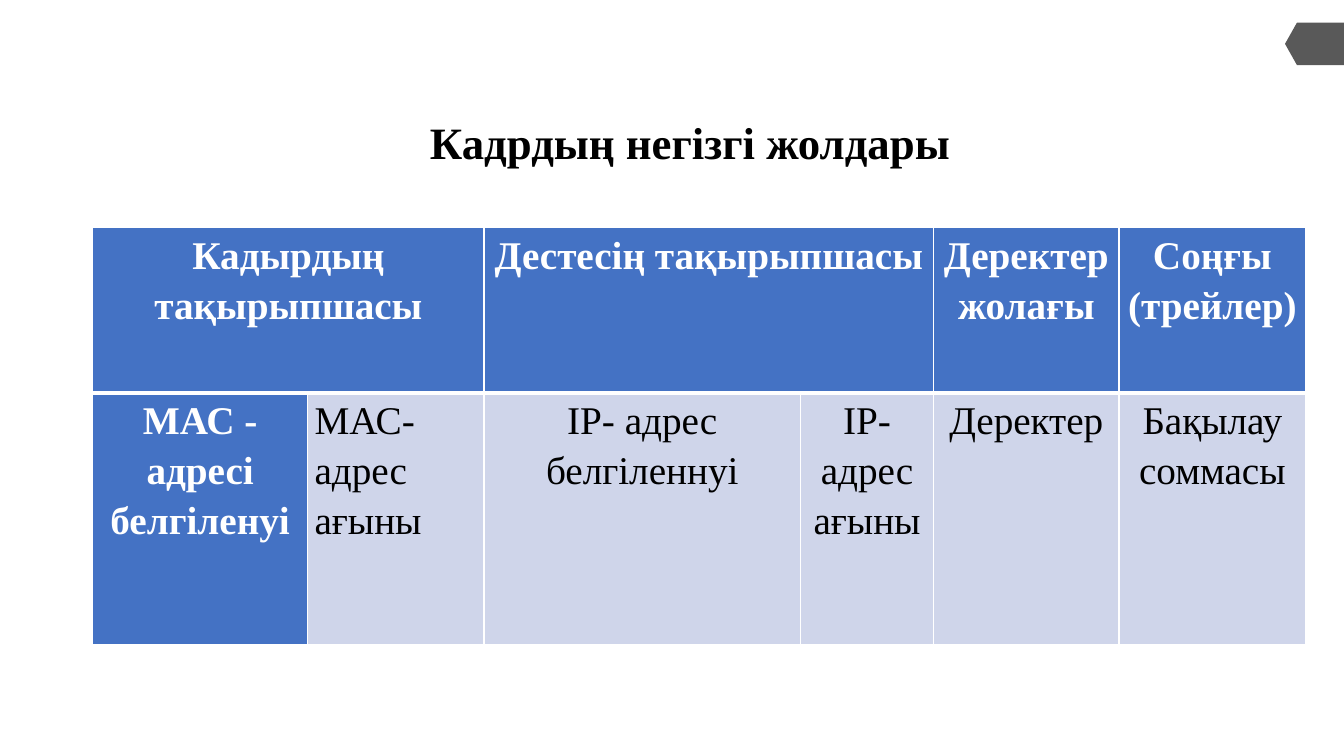
"""Build the slide on the main fields of a network frame."""
from lxml import etree
from pptx import Presentation
from pptx.dml.color import RGBColor
from pptx.enum.shapes import MSO_SHAPE
from pptx.enum.text import PP_ALIGN
from pptx.oxml.ns import qn
from pptx.util import Emu, Pt

CENTER, JUSTIFY = PP_ALIGN.CENTER, PP_ALIGN.JUSTIFY
PAGE_TAB = MSO_SHAPE.FLOWCHART_OFFPAGE_CONNECTOR
WHITE = RGBColor(0xFF, 0xFF, 0xFF)
BLACK = RGBColor(0x00, 0x00, 0x00)
GREY = RGBColor(0x59, 0x59, 0x59)
BLUE = RGBColor(0x44, 0x72, 0xC4)
PALE_BLUE = RGBColor(0xCF, 0xD5, 0xEA)

TITLE = "Кадрдың негізгі жолдары"
HEADERS = [
    ("Кадырдың тақырыпшасы", 2),
    ("Дестесің тақырыпшасы", 2),
    ("Деректер жолағы", 1),
    ("Соңғы (трейлер)", 1),
]
FIELDS = [
    "МАС - адресі белгіленуі",
    "МАС- адрес ағыны",
    "IP- адрес белгіленнуі",
    "IP- адрес ағыны",
    "Деректер",
    "Бақылау соммасы",
]
JUSTIFIED_COLUMN = 1
COLUMN_WIDTHS = [213, 175, 314, 132, 184, 185]
ROW_HEIGHTS = [164, 250]
CELL_MARGINS = {"margin_left": 7, "margin_right": 7, "margin_top": 0, "margin_bottom": 0}
PARAGRAPH_FORMAT = {"line_spacing": 1.15, "space_after": Pt(10)}


def px(length):
    return Emu(length * 9144)


def box(*lengths):
    return [px(length) for length in lengths]


def set_attributes(target, values):
    for name, value in values.items():
        setattr(target, name, value)


def write(text_frame, text, size, color, bold, alignment=CENTER):
    paragraph = text_frame.paragraphs[0]
    set_attributes(paragraph, {**PARAGRAPH_FORMAT, "alignment": alignment})
    run = paragraph.add_run()
    run.text = text
    set_attributes(run.font, {"name": "Times New Roman", "size": Pt(size), "bold": bold})
    run.font.color.rgb = color
    return paragraph


def style_cell(cell, fill, top, bottom):
    set_attributes(cell, {name: px(value) for name, value in CELL_MARGINS.items()})
    properties = cell._tc.get_or_add_tcPr()
    for side, points in {"L": 1, "R": 1, "T": top, "B": bottom}.items():
        line = etree.SubElement(properties, qn(f"a:ln{side}"), w=str(Pt(points)))
        solid = etree.SubElement(line, qn("a:solidFill"))
        etree.SubElement(solid, qn("a:srgbClr"), val=str(WHITE))
    cell.fill.solid()
    cell.fill.fore_color.rgb = fill


def add_page_tab(slide):
    tab = slide.shapes.add_shape(PAGE_TAB, *box(1283, 14, 42, 59))
    tab.rotation = 90
    tab.shadow.inherit = False
    tab.fill.solid()
    tab.fill.fore_color.rgb = GREY
    tab.line.fill.background()


def add_title(slide):
    title = slide.shapes.add_textbox(*box(103, 101, 1114, 112))
    title.text_frame.word_wrap = True
    paragraph = write(title.text_frame, TITLE, 32, BLACK, True)
    paragraph._p.get_or_add_pPr().set("indent", str(px(49)))


def add_frame_table(slide):
    size = sum(COLUMN_WIDTHS), sum(ROW_HEIGHTS)
    table = slide.shapes.add_table(
        len(ROW_HEIGHTS), len(COLUMN_WIDTHS), *box(92, 226, *size)
    ).table
    for column, width in zip(table.columns, COLUMN_WIDTHS):
        column.width = px(width)
    for row, height in zip(table.rows, ROW_HEIGHTS):
        row.height = px(height)

    first = 0
    for text, span in HEADERS:
        cell = table.cell(0, first)
        if span > 1:
            cell.merge(table.cell(0, first + span - 1))
        write(cell.text_frame, text, 28, WHITE, True)
        first += span

    for index, text in enumerate(FIELDS):
        is_label = index == 0
        alignment = JUSTIFY if index == JUSTIFIED_COLUMN else CENTER
        cell = table.cell(1, index)
        write(cell.text_frame, text, 28, WHITE if is_label else BLACK, is_label, alignment)
        style_cell(table.cell(0, index), BLUE, 1, 3)
        style_cell(cell, BLUE if is_label else PALE_BLUE, 3, 1)


def main():
    presentation = Presentation()
    presentation.slide_width, presentation.slide_height = box(1333, 750)
    slide = presentation.slides.add_slide(presentation.slide_layouts[6])
    add_page_tab(slide)
    add_title(slide)
    add_frame_table(slide)
    presentation.save("out.pptx")


if __name__ == "__main__":
    main()
